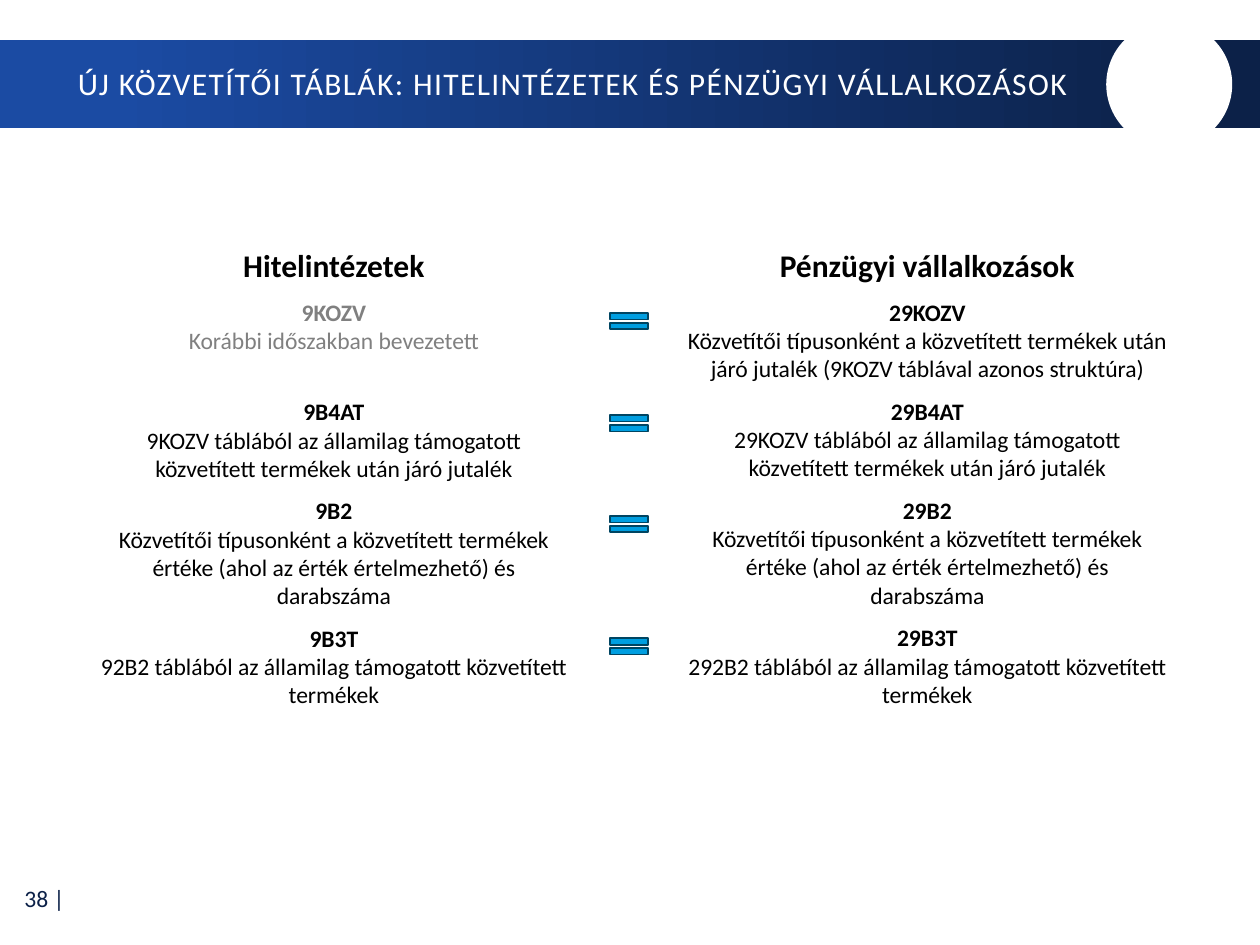
from dataclasses import dataclass

from pptx import Presentation
from pptx import util as u
from pptx.dml.color import RGBColor
from pptx.enum import shapes, text

FONT = "Calibri"
NAVY, BLUE, WHITE, BLACK, GREY = "0C2148", "1B4BA3", "FFFFFF", "000000", "808080"
SIGN_FILL, SIGN_LINE = "009EE0", "004562"
HEADING_SIZE, BODY_SIZE = 18, 13.5
COLUMN_TOP, COLUMN_WIDTH = 23.33, 40
SIGN_LEFT, SIGN_WIDTH, SIGN_HEIGHT = 47.9, 4.1, 2.93
SIGN_TOPS = (32.53, 43.33, 54, 66.93)


@dataclass
class Report:
    code: str
    description: str
    color: str = BLACK
    gap_before: float = 0


@dataclass
class Institution:
    name: str
    left: float
    height: float
    reports: list[Report]


COUNTS = ("Közvetítői típusonként a közvetített termékek értéke "
          "(ahol az érték értelmezhető) és darabszáma")
SUBSIDISED_FEES = "táblából az államilag támogatott közvetített termékek után járó jutalék"
SUBSIDISED_PRODUCTS = "táblából az államilag támogatott közvetített termékek"

INSTITUTIONS = [
    Institution("Pénzügyi vállalkozások", 53.6, 55.87, [
        Report("29KOZV", "Közvetítői típusonként a közvetített termékek után járó "
                         "jutalék (9KOZV táblával azonos struktúra)"),
        Report("29B4AT", f"29KOZV {SUBSIDISED_FEES}"),
        Report("29B2", COUNTS),
        Report("29B3T", f"292B2 {SUBSIDISED_PRODUCTS}"),
    ]),
    Institution("Hitelintézetek", 6.5, 52.8, [
        Report("9KOZV", "Korábbi időszakban bevezetett", GREY),
        Report("9B4AT", f"9KOZV {SUBSIDISED_FEES}", gap_before=16.5),
        Report("9B2", COUNTS),
        Report("9B3T", f"92B2 {SUBSIDISED_PRODUCTS}"),
    ]),
]

prs = Presentation()
prs.slide_width, prs.slide_height = u.Inches(10), u.Inches(7.5)
slide = prs.slides.add_slide(prs.slide_layouts[6])


def rgb(value: str) -> RGBColor:
    return RGBColor.from_string(value)


def place(left: float, top: float, width: float, height: float) -> list[int]:
    """Turn percentages of the slide's width and height into lengths."""
    across, down = prs.slide_width / 100, prs.slide_height / 100
    return [round(left * across), round(top * down),
            round(width * across), round(height * down)]


def add_shape(kind, area: list[int], fill: str, line: str | None = None):
    shape = slide.shapes.add_shape(kind, *area)
    shape.shadow.inherit = False
    shape.fill.solid()
    shape.fill.fore_color.rgb = rgb(fill)
    if line:
        shape.line.color.rgb = rgb(line)
        shape.line.width = u.Pt(1)
    else:
        shape.line.fill.background()
    return shape


def add_frame(area: list[int], anchor=text.MSO_ANCHOR.TOP):
    frame = slide.shapes.add_textbox(*area).text_frame
    frame.word_wrap = True
    frame.vertical_anchor = anchor
    return frame


def write(paragraph, words: str, size: float, color: str, align,
          bold: bool = False, spacing: float = 1.0):
    paragraph.text = words
    paragraph.alignment = align
    paragraph.line_spacing = spacing
    font = paragraph.runs[0].font
    font.name, font.size, font.bold = FONT, u.Pt(size), bold
    font.color.rgb = rgb(color)
    return paragraph


def add_banner(title: str) -> None:
    band = add_shape(shapes.MSO_SHAPE.RECTANGLE, place(0, 4.27, 100, 9.33), BLUE)
    band.fill.gradient()
    band.fill.gradient_angle = 0
    stops = ((0.09, BLUE), (0.95, NAVY))
    for stop, (position, color) in zip(band.fill.gradient_stops, stops):
        stop.position = position
        stop.color.rgb = rgb(color)
    add_shape(shapes.MSO_SHAPE.OVAL, place(87.8, 2.27, 10, 13.33), WHITE)
    frame = add_frame(place(5.2, 4.53, 83.2, 8.93), text.MSO_ANCHOR.MIDDLE)
    heading = write(frame.paragraphs[0], title, HEADING_SIZE, WHITE,
                    text.PP_ALIGN.LEFT, spacing=0.9)
    heading.runs[0]._r.get_or_add_rPr().set("spc", "80")


def add_page_number(label: str) -> None:
    frame = add_frame(place(0.1, 92.53, 6, 4.93), text.MSO_ANCHOR.MIDDLE)
    write(frame.paragraphs[0], label, BODY_SIZE, NAVY, text.PP_ALIGN.RIGHT)


def add_institution(institution: Institution) -> None:
    frame = add_frame(place(institution.left, COLUMN_TOP, COLUMN_WIDTH, institution.height))
    frame.auto_size = text.MSO_AUTO_SIZE.SHAPE_TO_FIT_TEXT
    center = text.PP_ALIGN.CENTER
    write(frame.paragraphs[0], institution.name, HEADING_SIZE, BLACK, center, True, 1.5)
    for report in institution.reports:
        code = write(frame.add_paragraph(), report.code, BODY_SIZE, report.color,
                     center, True, 1.5)
        if report.gap_before:
            code.space_before = u.Pt(report.gap_before)
        write(frame.add_paragraph(), report.description, BODY_SIZE, report.color, center)


add_page_number("38 |")
add_banner("ÚJ KÖZVETÍTŐI TÁBLÁK: HITELINTÉZETEK ÉS PÉNZÜGYI VÁLLALKOZÁSOK")
for institution in INSTITUTIONS:
    add_institution(institution)
for sign_top in SIGN_TOPS:
    add_shape(shapes.MSO_SHAPE.MATH_EQUAL,
              place(SIGN_LEFT, sign_top, SIGN_WIDTH, SIGN_HEIGHT), SIGN_FILL, SIGN_LINE)

prs.save("out.pptx")
